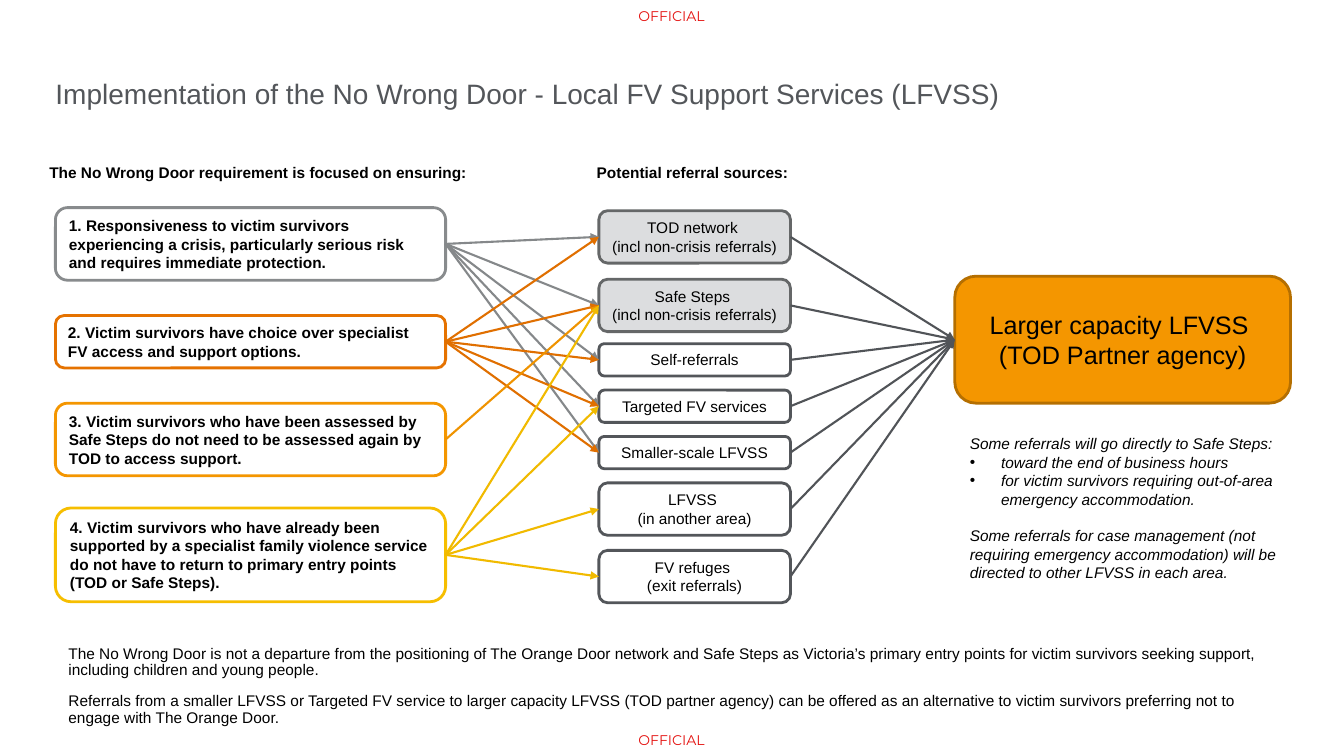
from lxml import etree
from pptx import Presentation
from pptx.dml.color import RGBColor
from pptx.enum.shapes import MSO_CONNECTOR, MSO_SHAPE
from pptx.enum.text import MSO_ANCHOR, PP_ALIGN
from pptx.oxml.ns import qn
from pptx.util import Inches, Pt

ROUNDED, STRAIGHT = MSO_SHAPE.ROUNDED_RECTANGLE, MSO_CONNECTOR.STRAIGHT
TOP, MIDDLE = MSO_ANCHOR.TOP, MSO_ANCHOR.MIDDLE
LEFT, CENTER = PP_ALIGN.LEFT, PP_ALIGN.CENTER
LEFT_SITE, RIGHT_SITE = 1, 3
BLACK, WHITE, GREY, SLATE = "000000", "FFFFFF", "DCDDDF", "53565A"

# Content
MARKING = "OFFICIAL"
TITLE = "Implementation of the No Wrong Door - Local FV Support Services (LFVSS)"
HEADINGS = [
    (0.39, 4.51, "The No Wrong Door requirement is focused on ensuring:"),
    (5.82, 2.25, "Potential referral sources:"),
]
# Top, line count, outline, arrow colour, text, indexes of linked sources
AIMS = [
    (2.06, 3, "888B8D", "85888A",
     "1. Responsiveness to victim survivors experiencing a crisis, particularly "
     "serious risk and requires immediate protection.", (0, 1, 2, 3, 4)),
    (3.13, 2, "E57200", "E06F00",
     "2. Victim survivors have choice over specialist FV access and support options.",
     (0, 1, 2, 3, 4)),
    (4.0, 3, "F49600", "EF9300",
     "3. Victim survivors who have been assessed by Safe Steps do not need to be "
     "assessed again by TOD to access support.", (1,)),
    (5.04, 4, "F6BE00", "F1BA00",
     "4. Victim survivors who have already been supported by a specialist family "
     "violence service do not have to return to primary entry points "
     "(TOD or Safe Steps).", (1, 3, 5, 6)),
]
# Top, fill, outline, text
SOURCES = [
    (2.09, GREY, "656768", "TOD network \n(incl non-crisis referrals)"),
    (2.77, GREY, "656768", "Safe Steps \n(incl non-crisis referrals)"),
    (3.41, WHITE, SLATE, "Self-referrals"),
    (3.87, WHITE, SLATE, "Targeted FV services"),
    (4.33, WHITE, SLATE, "Smaller-scale LFVSS"),
    (4.79, WHITE, SLATE, "LFVSS \n(in another area)"),
    (5.46, WHITE, SLATE, "FV refuges \n(exit referrals)"),
]
AGENCY = ["Larger capacity LFVSS ", "(TOD Partner agency)"]
# Text, bulleted, space before in points
REFERRAL_NOTES = [
    ("Some referrals will go directly to Safe Steps:", False, 0),
    ("toward the end of business hours", True, 0),
    ("for victim survivors requiring out-of-area emergency accommodation.", True, 0),
    ("Some referrals for case management (not requiring emergency accommodation) "
     "will be directed to other LFVSS in each area.", False, 13),
]
SUMMARY = [
    "The No Wrong Door is not a departure from the positioning of The Orange Door "
    "network and Safe Steps as Victoria’s primary entry points for victim survivors "
    "seeking support, including children and young people.",
    "Referrals from a smaller LFVSS or Targeted FV service to larger capacity LFVSS "
    "(TOD partner agency) can be offered as an alternative to victim survivors "
    "preferring not to engage with The Orange Door.",
]


def color(value):
    return RGBColor.from_string(value)


def box_height(lines):
    return round(0.11 + 0.205 * lines, 2)


def write(box, texts, size=11, ink=BLACK, bold=False, italic=False, align=LEFT,
          anchor=TOP, font="Arial", spacing=None, gap=0, inset=None):
    frame = box.text_frame
    frame.word_wrap = True
    frame.vertical_anchor = anchor
    if inset is not None:
        frame.margin_left = frame.margin_right = Inches(inset)
        frame.margin_top = frame.margin_bottom = Inches(inset)
    for index, text in enumerate(texts):
        para = frame.add_paragraph() if index else frame.paragraphs[0]
        para.alignment = align
        if spacing:
            para.line_spacing = spacing
        if index and gap:
            para.space_before = Pt(gap)
        for number, line in enumerate(text.split("\n")):
            if number:
                para.add_line_break()
            span = para.add_run()
            span.text = line
            span.font.name = font
            span.font.size = Pt(size)
            span.font.bold = bold
            span.font.italic = italic
            span.font.color.rgb = color(ink)
    return frame


def add_text(page, place, texts, **style):
    box = page.shapes.add_textbox(*map(Inches, place))
    return write(box, texts, **style)


def add_box(page, place, fill, outline, texts, **style):
    box = page.shapes.add_shape(ROUNDED, *map(Inches, place))
    box.shadow.inherit = False
    box.fill.solid()
    box.fill.fore_color.rgb = color(fill)
    box.line.color.rgb = color(outline)
    box.line.width = Pt(2)
    write(box, texts, anchor=MIDDLE, **style)
    return box


def add_arrow(page, start, end, ink):
    arrow = page.shapes.add_connector(STRAIGHT, 0, 0, 0, 0)
    arrow.begin_connect(start, RIGHT_SITE)
    arrow.end_connect(end, LEFT_SITE)
    arrow.line.color.rgb = color(ink)
    arrow.line.width = Pt(1.5)
    etree.SubElement(arrow.line._get_or_add_ln(), qn("a:tailEnd"), type="triangle")
    etree.SubElement(arrow._element.spPr, qn("a:effectLst"))


def add_bullet(para):
    properties = para._p.get_or_add_pPr()
    properties.set("marL", str(Inches(0.31)))
    properties.set("indent", str(Inches(-0.31)))
    etree.SubElement(properties, qn("a:buFont"), typeface="Arial")
    etree.SubElement(properties, qn("a:buChar"), char="•")


def main():
    deck = Presentation()
    deck.slide_width, deck.slide_height = Inches(13.33), Inches(7.5)
    page = deck.slides.add_slide(deck.slide_layouts[6])

    # Markings, title and column headings
    for top in (0, 7.19):
        add_text(page, (6.15, top, 1.02, 0.31), [MARKING], size=10, ink="E4100E",
                 font="Montserrat", align=CENTER, anchor=MIDDLE, inset=0)
    add_text(page, (0.55, 0.4, 11.72, 1.05), [TITLE], size=20, ink=SLATE,
             anchor=MIDDLE, inset=0)
    for left, width, heading in HEADINGS:
        add_text(page, (left, 1.55, width, 0.39), [heading], bold=True, spacing=1.1)

    # Boxes of the three columns
    aims = [add_box(page, (0.55, top, 3.87, box_height(lines)), WHITE, outline,
                    [text], bold=True)
            for top, lines, outline, _, text, _ in AIMS]
    sources = [add_box(page, (5.94, top, 1.9, box_height(text.count("\n") + 1)),
                       fill, outline, [text], align=CENTER)
               for top, fill, outline, text in SOURCES]
    agency = add_box(page, (9.47, 2.74, 3.33, 1.26), "F49600", "B56F00", AGENCY,
                     size=18, align=CENTER)

    # Notes beside and below the diagram
    notes = add_text(page, (9.52, 4.26, 3.28, 1.58),
                     [text for text, _, _ in REFERRAL_NOTES], italic=True)
    for para, (_, bulleted, before) in zip(notes.paragraphs, REFERRAL_NOTES):
        if before:
            para.space_before = Pt(before)
        if bulleted:
            add_bullet(para)
    add_text(page, (0.58, 6.36, 12.05, 0.89), SUMMARY, spacing=0.9, gap=10)

    # Arrows from aims to sources, then from sources to the agency
    for aim, (_, _, _, ink, _, links) in zip(aims, AIMS):
        for link in links:
            add_arrow(page, aim, sources[link], ink)
    for source in sources:
        add_arrow(page, source, agency, "515458")

    deck.save("out.pptx")


if __name__ == "__main__":
    main()
